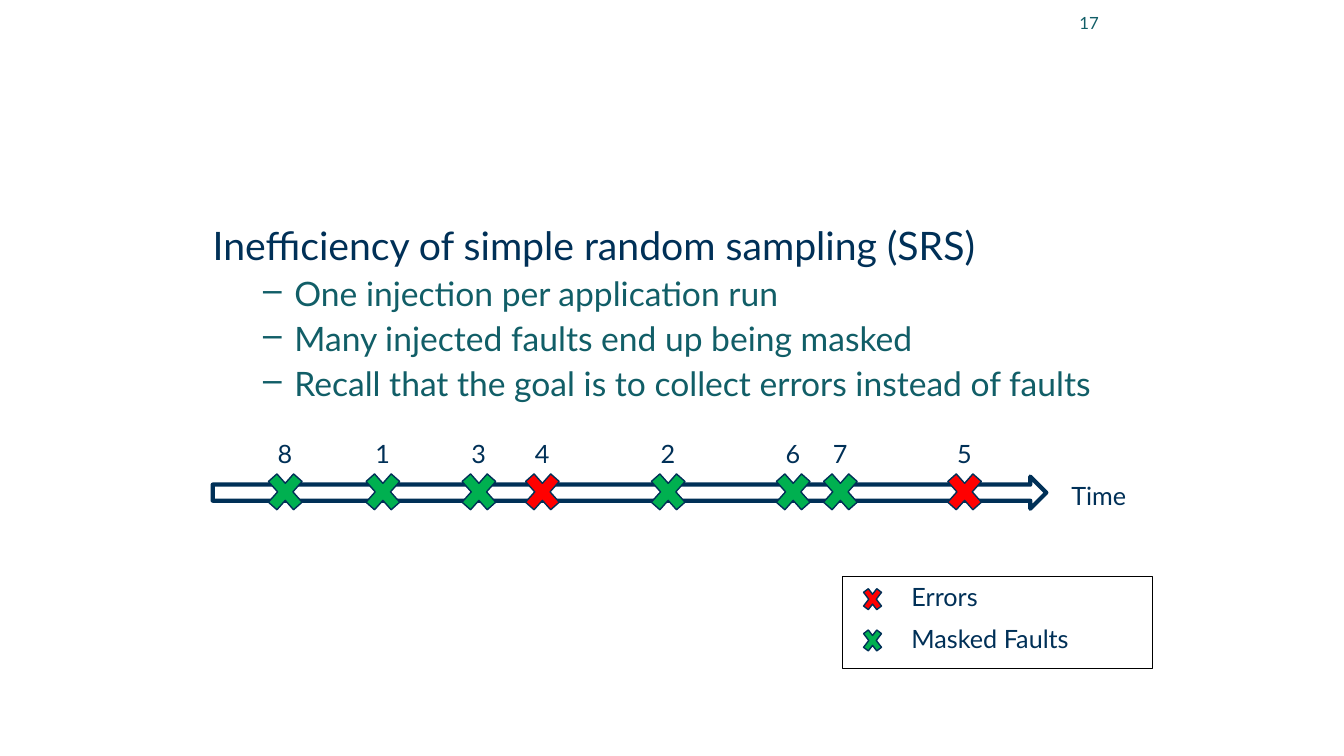
from lxml import etree
from pptx import Presentation
from pptx.dml.color import RGBColor
from pptx.enum import shapes, text
from pptx.oxml.ns import qn
from pptx.util import Cm, Pt

NAVY = RGBColor(0x00, 0x30, 0x57)
TEAL = RGBColor(0x11, 0x5E, 0x67)
RED = RGBColor(0xFF, 0x00, 0x00)
GREEN = RGBColor(0x00, 0xB0, 0x50)
BLACK = RGBColor(0x00, 0x00, 0x00)

presentation = Presentation()
presentation.slide_width, presentation.slide_height = Cm(33.87), Cm(19.05)
slide = presentation.slides.add_slide(presentation.slide_layouts[6])


def add_outline(kind, box, line_color, line_width, fill=None):
    """Add a preset shape; box is left, top, width, height in cm."""
    shape = slide.shapes.add_shape(kind, *map(Cm, box))
    shape.shadow.inherit = False
    if fill is None:
        shape.fill.background()
    else:
        shape.fill.solid()
        shape.fill.fore_color.rgb = fill
    shape.line.color.rgb = line_color
    shape.line.width = Pt(line_width)


def add_label(box, words, size=18, color=NAVY):
    """Add a one-paragraph text box and return its frame and paragraph."""
    frame = slide.shapes.add_textbox(*map(Cm, box)).text_frame
    frame.word_wrap = True
    paragraph = frame.paragraphs[0]
    paragraph.text = words
    paragraph.font.name = "Lato"
    paragraph.font.size = Pt(size)
    paragraph.font.color.rgb = color
    return frame, paragraph


# Slide number
number_frame, number = add_label((24.84, -0.05, 3.1, 1.27), "17", 12, TEAL)
number_frame.vertical_anchor = text.MSO_ANCHOR.MIDDLE
number.alignment = text.PP_ALIGN.RIGHT

# Heading with dashed points
body, heading = add_label((5.36, 5.72, 27.94, 4.8),
                          "Inefficiency of simple random sampling (SRS)", 28)
body.margin_left = body.margin_top = body.margin_right = body.margin_bottom = 0
heading.line_spacing = 0.9
for point in ("One injection per application run",
              "Many injected faults end up being masked",
              "Recall that the goal is to collect errors instead of faults"):
    paragraph = body.add_paragraph()
    paragraph.text = point
    paragraph.level = 1
    paragraph.line_spacing = 0.9
    paragraph.space_before = Pt(6)
    properties = paragraph._p.get_or_add_pPr()
    properties.set("marL", str(Cm(2.06)))
    properties.set("indent", str(Cm(-0.79)))
    bullet_color = etree.SubElement(properties, qn("a:buClr"))
    etree.SubElement(bullet_color, qn("a:srgbClr"), val=str(TEAL))
    etree.SubElement(properties, qn("a:buChar"), char="–")
    paragraph.font.name = "Lato"
    paragraph.font.size = Pt(24)
    paragraph.font.color.rgb = TEAL

# Legend
add_outline(shapes.MSO_SHAPE.RECTANGLE, (21.23, 14.53, 7.82, 2.31), BLACK, 1)
for row, (meaning, color) in enumerate((("Errors", RED), ("Masked Faults", GREEN))):
    top = 14.53 + 1.04 * row
    add_outline(shapes.MSO_SHAPE.MATH_MULTIPLY, (21.67, top + 0.15, 0.64, 0.84),
                NAVY, 1, color)
    add_label((22.72, top, 7.01, 1.02), meaning)

# Timeline with numbered injections
add_outline(shapes.MSO_SHAPE.RIGHT_ARROW, (5.36, 12.01, 21.01, 0.81), NAVY, 3)
add_label((26.75, 11.99, 2.44, 1.02), "Time")
injections = (("1", 9.04, GREEN), ("2", 16.23, GREEN), ("3", 11.46, GREEN),
              ("4", 13.06, RED), ("5", 23.7, RED), ("6", 19.38, GREEN),
              ("7", 20.57, GREEN), ("8", 6.58, GREEN))
for order, left, color in injections:
    add_outline(shapes.MSO_SHAPE.MATH_MULTIPLY, (left, 11.71, 1.22, 1.37),
                NAVY, 1, color)
    add_label((left + 0.17, 10.92, 1.22, 1.02), order)

presentation.save("out.pptx")
